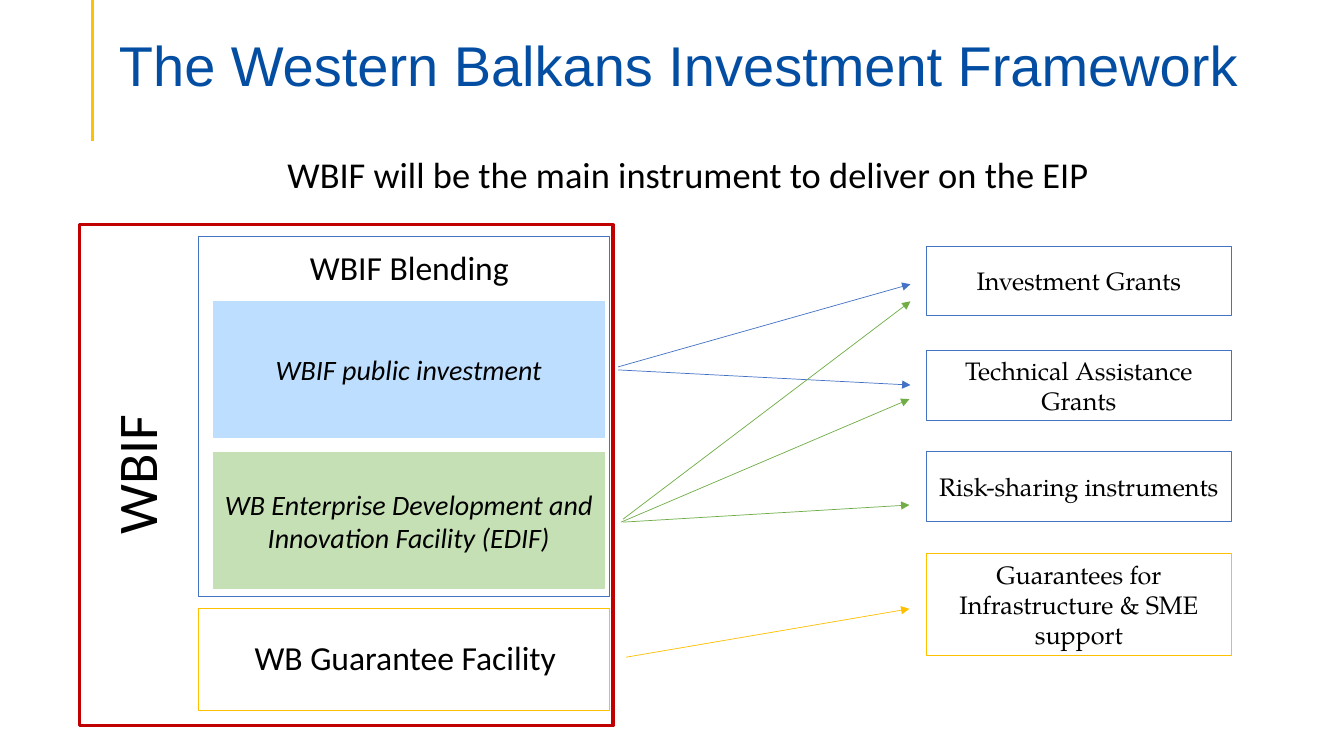
from pptx import Presentation
from pptx.dml.color import RGBColor
from pptx.enum.shapes import MSO_CONNECTOR, MSO_SHAPE
from pptx.enum.text import MSO_ANCHOR, MSO_AUTO_SIZE, PP_ALIGN
from pptx.oxml.ns import qn
from pptx.util import Inches, Pt
from lxml import etree

RECT = MSO_SHAPE.RECTANGLE
LINE = MSO_CONNECTOR.STRAIGHT
LEFT, MID = PP_ALIGN.LEFT, PP_ALIGN.CENTER
TOP, CENTER, BOTTOM = MSO_ANCHOR.TOP, MSO_ANCHOR.MIDDLE, MSO_ANCHOR.BOTTOM

SANS, SERIF = "Calibri", "TeX Gyre Pagella"
BLACK, WHITE, NAVY, RED = "000000", "FFFFFF", "034EA2", "C00000"
BLUE, GREEN, GOLD = "4472C4", "70AD47", "FFC000"
SKY, LEAF = "BDDEFF", "C5E0B4"

TITLE = "The Western Balkans Investment Framework"

# left, top, width, height, fill, line, line width
FRAMES = [
    (0.79, 2.23, 5.29, 4.97, WHITE, RED, 2.25),
    (1.97, 2.34, 4.07, 3.58, WHITE, BLUE, 0.5),
    (1.97, 6.04, 4.07, 1.01, WHITE, GOLD, 0.5),
]
# text, top, colour
PARTS = [
    ("WBIF public investment", 2.99, SKY),
    ("WB Enterprise Development and Innovation Facility (EDIF)", 4.49, LEAF),
]
# text, top, height, line
TOOLS = [
    ("Investment Grants", 2.44, 0.69, BLUE),
    ("Technical Assistance Grants", 3.48, 0.69, BLUE),
    ("Risk-sharing instruments", 4.48, 0.69, BLUE),
    ("Guarantees for Infrastructure & SME support", 5.49, 1.01, GOLD),
]
# text, left, top, width, height, size, turn
LABELS = [
    ("WBIF will be the main instrument to deliver on the EIP",
     1.4, 1.46, 10.86, 0.59, 26, 0),
    ("WBIF Blending", 2.02, 2.4, 4.08, 0.5, 24, 0),
    ("WB Guarantee Facility", 1.98, 6.27, 4.08, 0.5, 24, 0),
    ("WBIF", -1.14, 4.32, 4.97, 0.77, 40, 270),
]
# start, end, colour
ARROWS = [
    ((6.13, 3.64), (9.03, 2.82), BLUE),
    ((6.13, 3.67), (9.03, 3.82), BLUE),
    ((6.18, 5.15), (9.03, 2.99), GREEN),
    ((6.16, 5.18), (9.02, 3.96), GREEN),
    ((6.18, 5.18), (9.02, 5.01), GREEN),
    ((6.21, 6.52), (9.02, 6.04), GOLD),
]


def color(code):
    return RGBColor.from_string(code)


def write(shape, text, size, face=SANS, tint=BLACK, slant=False,
          align=MID, anchor=TOP):
    frame = shape.text_frame
    frame.word_wrap = True
    frame.auto_size = MSO_AUTO_SIZE.NONE
    frame.vertical_anchor = anchor
    para = frame.paragraphs[0]
    para.alignment = align
    run = para.add_run()
    run.text = text
    font = run.font
    font.name, font.size, font.italic = face, Pt(size), slant
    font.color.rgb = color(tint)
    return para


def add_box(slide, left, top, width, height, fill, line, weight=0.5):
    box = slide.shapes.add_shape(
        RECT, Inches(left), Inches(top), Inches(width), Inches(height))
    box.shadow.inherit = False
    box.fill.solid()
    box.fill.fore_color.rgb = color(fill)
    box.line.color.rgb = color(line)
    box.line.width = Pt(weight)
    return box


def add_line(slide, start, end, tint, weight=0.5, head=True):
    link = slide.shapes.add_connector(
        LINE, *[Inches(n) for n in start + end])
    link.line.color.rgb = color(tint)
    link.line.width = Pt(weight)
    if head:
        tail = etree.SubElement(link.line._get_or_add_ln(), qn("a:tailEnd"))
        tail.set("type", "triangle")
    etree.SubElement(link._element.spPr, qn("a:effectLst"))


def main():
    deck = Presentation()
    deck.slide_width, deck.slide_height = Inches(13.33), Inches(7.5)
    slide = deck.slides.add_slide(deck.slide_layouts[5])

    title = slide.shapes.title
    title.left, title.top = Inches(1.08), Inches(0.12)
    title.width, title.height = Inches(11.5), Inches(0.86)
    para = write(title, TITLE, 40, "Arial", NAVY, align=LEFT, anchor=BOTTOM)
    para.line_spacing = 0.9
    title.text_frame.margin_bottom = 0

    add_line(slide, (0.92, 0), (0.92, 1.4), GOLD, 2.25, head=False)
    for frame in FRAMES:
        add_box(slide, *frame)
    for text, top, tint in PARTS:
        box = add_box(slide, 2.12, top, 3.87, 1.35, tint, tint)
        write(box, text, 20, slant=True, anchor=CENTER)
    for text, top, height, tint in TOOLS:
        box = add_box(slide, 9.19, top, 3.02, height, WHITE, tint)
        write(box, text, 18, SERIF, anchor=CENTER)
    for text, left, top, width, height, size, turn in LABELS:
        label = slide.shapes.add_textbox(
            Inches(left), Inches(top), Inches(width), Inches(height))
        label.rotation = turn
        write(label, text, size)
    for start, end, tint in ARROWS:
        add_line(slide, start, end, tint)

    deck.save("out.pptx")


if __name__ == "__main__":
    main()
